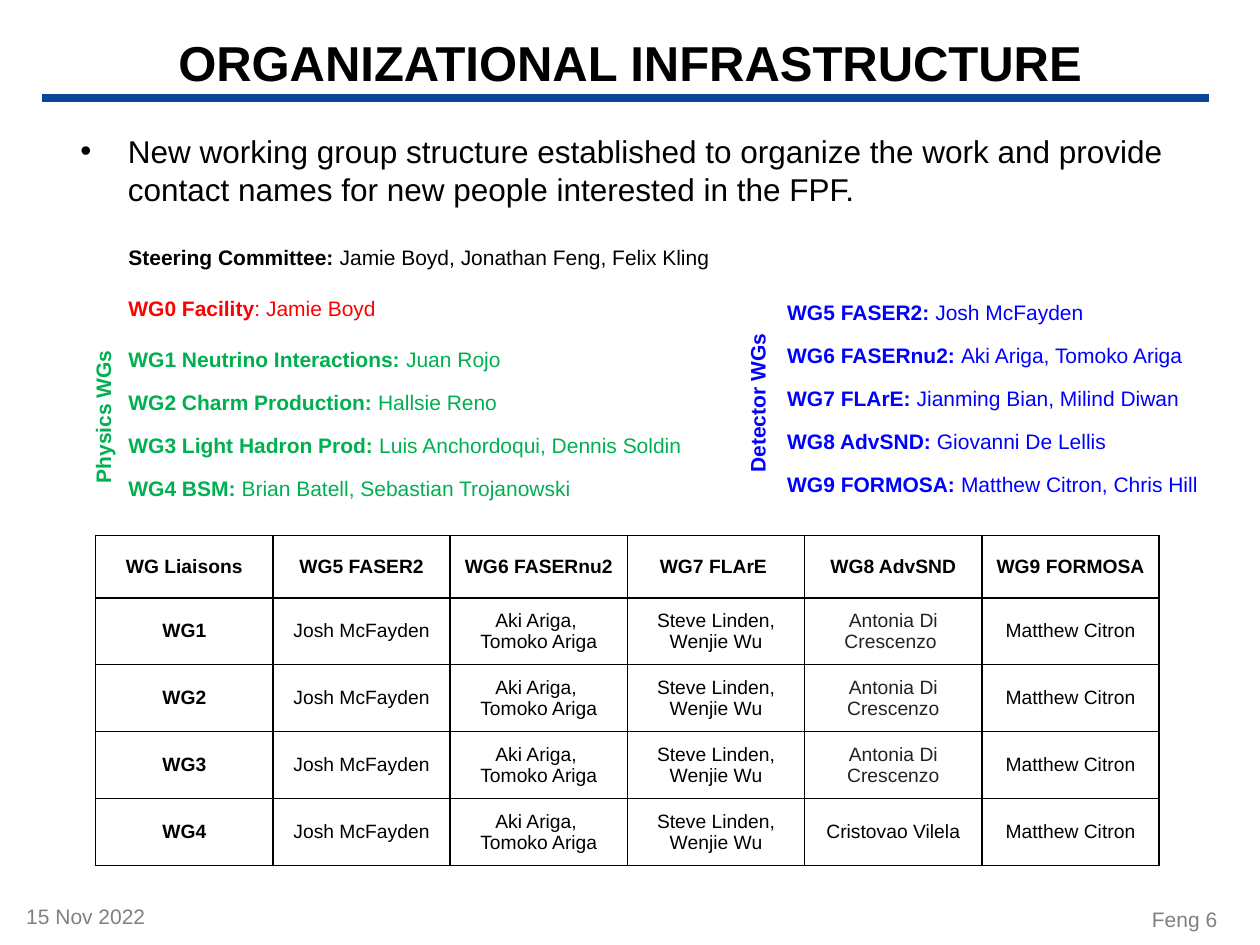
from dataclasses import dataclass

from lxml import etree
from pptx import Presentation
from pptx.dml.color import RGBColor
from pptx.enum.shapes import MSO_CONNECTOR
from pptx.enum.text import MSO_ANCHOR, PP_ALIGN
from pptx.oxml.ns import qn
from pptx.util import Cm, Pt

LEFT, MID, RIGHT = PP_ALIGN.LEFT, PP_ALIGN.CENTER, PP_ALIGN.RIGHT
CENTRE = MSO_ANCHOR.MIDDLE
STRAIGHT = MSO_CONNECTOR.STRAIGHT
FONT = "Arial"
COLORS = {
    "black": "000000", "ink": "222222", "gray": "808080", "navy": "0B4599",
    "red": "FF0000", "green": "00B050", "blue": "0000FF",
}
WIDE, TIGHT = 14.8, 10.2  # points above a line of a group list


@dataclass
class Box:
    left: float
    top: float
    width: float
    height: float

    def cm(self) -> list:
        return [Cm(n) for n in (self.left, self.top, self.width, self.height)]


@dataclass
class Label:
    text: str
    box: Box
    color: str
    align: PP_ALIGN = LEFT
    bold: bool = False
    turn: int = 0


@dataclass
class Group:
    name: str
    people: str
    color: str
    gap: float = TIGHT


LABELS = [
    Label("15 Nov 2022", Box(0.28, 18.08, 5.28, 0.89), "gray"),
    Label("Feng 6", Box(19.51, 18.16, 5.28, 0.89), "gray", RIGHT),
    Label("Physics WGs", Box(0.46, 8, 3.23, 0.76), "green", bold=True, turn=270),
    Label("Detector WGs", Box(13.41, 7.54, 3.71, 0.76), "blue", bold=True, turn=270),
]
PHYSICS = [
    Group("Steering Committee: ", "Jamie Boyd, Jonathan Feng, Felix Kling", "black", 0),
    Group("WG0 Facility", ": Jamie Boyd", "red", WIDE),
    Group("WG1 Neutrino Interactions: ", "Juan Rojo", "green", WIDE),
    Group("WG2 Charm Production: ", "Hallsie Reno", "green"),
    Group("WG3 Light Hadron Prod: ", "Luis Anchordoqui, Dennis Soldin", "green"),
    Group("WG4 BSM: ", "Brian Batell, Sebastian Trojanowski", "green"),
]
DETECTOR = [
    Group("WG5 FASER2: ", "Josh McFayden", "blue", 0),
    Group("WG6 FASERnu2: ", "Aki Ariga, Tomoko Ariga", "blue"),
    Group("WG7 FLArE: ", "Jianming Bian, Milind Diwan", "blue"),
    Group("WG8 AdvSND: ", "Giovanni De Lellis", "blue"),
    Group("WG9 FORMOSA: ", "Matthew Citron, Chris Hill", "blue"),
]
HEAD = ["WG Liaisons", "WG5 FASER2", "WG6 FASERnu2", "WG7 FLArE ",
        "WG8 AdvSND", "WG9 FORMOSA"]
ADVSND = ["Antonia Di Crescenzo ", "Antonia Di Crescenzo",
          "Antonia Di Crescenzo", "Cristovao Vilela"]
ROWS = [HEAD] + [
    [f"WG{n}", "Josh McFayden", "Aki Ariga, \nTomoko Ariga",
     "Steve Linden, Wenjie Wu", name, "Matthew Citron"]
    for n, name in enumerate(ADVSND, 1)
]


def put(item, values: dict) -> None:
    """Set each named attribute of the item."""
    for key, value in values.items():
        setattr(item, key, value)


def add_run(para, text: str, size: float, color: str, bold: bool = False) -> None:
    run = para.add_run()
    run.text = text
    put(run.font, {"name": FONT, "size": Pt(size), "bold": bold})
    run.font.color.rgb = RGBColor.from_string(COLORS[color])


def add_box(slide, box: Box):
    shape = slide.shapes.add_textbox(*box.cm())
    shape.text_frame.word_wrap = True
    return shape


def draw_title(slide, text: str) -> None:
    title = slide.shapes.title
    put(title, dict(zip(("left", "top", "width", "height"),
                        Box(0, 0.64, 25.4, 1.22).cm())))
    title.text_frame.vertical_anchor = CENTRE
    para = title.text_frame.paragraphs[0]
    para.alignment = MID
    add_run(para, text, 28, "black", True)


def draw_rule(slide) -> None:
    rule = slide.shapes.add_connector(STRAIGHT, Cm(0.84), Cm(1.98), Cm(24.38), Cm(1.98))
    rule.line.color.rgb = RGBColor.from_string(COLORS["navy"])
    rule.line.width = Pt(4.5)
    etree.SubElement(rule._element.spPr, qn("a:effectLst"))


def draw_bullet(slide, text: str, box: Box) -> None:
    para = add_box(slide, box).text_frame.paragraphs[0]
    add_run(para, text, 18, "black")
    props = para._p.get_or_add_pPr()
    props.set("marL", str(Cm(0.96)))
    props.set("indent", str(-Cm(0.96)))
    etree.SubElement(props, qn("a:buFont"), typeface=FONT)
    etree.SubElement(props, qn("a:buChar"), char="•")


def draw_label(slide, label: Label) -> None:
    shape = add_box(slide, label.box)
    shape.rotation = label.turn
    para = shape.text_frame.paragraphs[0]
    para.alignment = label.align
    add_run(para, label.text, 12, label.color, label.bold)


def draw_groups(slide, groups: list[Group], box: Box) -> None:
    frame = add_box(slide, box).text_frame
    for i, group in enumerate(groups):
        para = frame.add_paragraph() if i else frame.paragraphs[0]
        para.space_before = Pt(group.gap)
        add_run(para, group.name, 12, group.color, True)
        add_run(para, group.people, 12, group.color)


def edge_cell(cell) -> None:
    """Draw a thin black line on all four sides."""
    props = cell._tc.get_or_add_tcPr()
    for i, tag in enumerate(("a:lnL", "a:lnR", "a:lnT", "a:lnB")):
        line = etree.Element(qn(tag), w=str(Pt(1)))
        fill = etree.SubElement(line, qn("a:solidFill"))
        etree.SubElement(fill, qn("a:srgbClr"), val=COLORS["black"])
        props.insert(i, line)


def fill_cell(cell, text: str, color: str, bold: bool) -> None:
    sides = ("left", "right", "top", "bottom")
    put(cell, {f"margin_{side}": Cm(0.18) for side in sides})
    cell.vertical_anchor = CENTRE
    cell.fill.background()
    edge_cell(cell)
    for i, part in enumerate(text.split("\n")):
        para = cell.text_frame.add_paragraph() if i else cell.text_frame.paragraphs[0]
        para.alignment = MID
        add_run(para, part, 11, color, bold)


def draw_table(slide, rows: list[list[str]], box: Box) -> None:
    table = slide.shapes.add_table(len(rows), len(rows[0]), *box.cm()).table
    put(table, {"first_row": False, "horz_banding": False})
    for col in table.columns:
        col.width = Cm(box.width / len(rows[0]))
    for r, row in enumerate(rows):
        table.rows[r].height = Cm(1.35 if r else 1.25)
        for c, text in enumerate(row):
            color = "ink" if text.startswith("Antonia") else "black"
            fill_cell(table.cell(r, c), text, color, r == 0 or c == 0)


def main() -> None:
    deck = Presentation()
    put(deck, {"slide_width": Cm(25.4), "slide_height": Cm(19.05)})
    slide = deck.slides.add_slide(deck.slide_layouts[5])
    draw_rule(slide)
    draw_title(slide, "ORGANIZATIONAL INFRASTRUCTURE")
    draw_bullet(slide, "New working group structure established to organize the work "
                "and provide contact names for new people interested in the FPF.",
                Box(1.37, 2.54, 23.39, 2.11))
    draw_table(slide, ROWS, Box(1.93, 10.8, 21.44, 6.65))
    draw_groups(slide, DETECTOR, Box(15.62, 5.92, 9.75, 4.01))
    draw_groups(slide, PHYSICS, Box(2.34, 4.8, 13.34, 5.72))
    for label in LABELS:
        draw_label(slide, label)
    deck.save("out.pptx")


if __name__ == "__main__":
    main()
